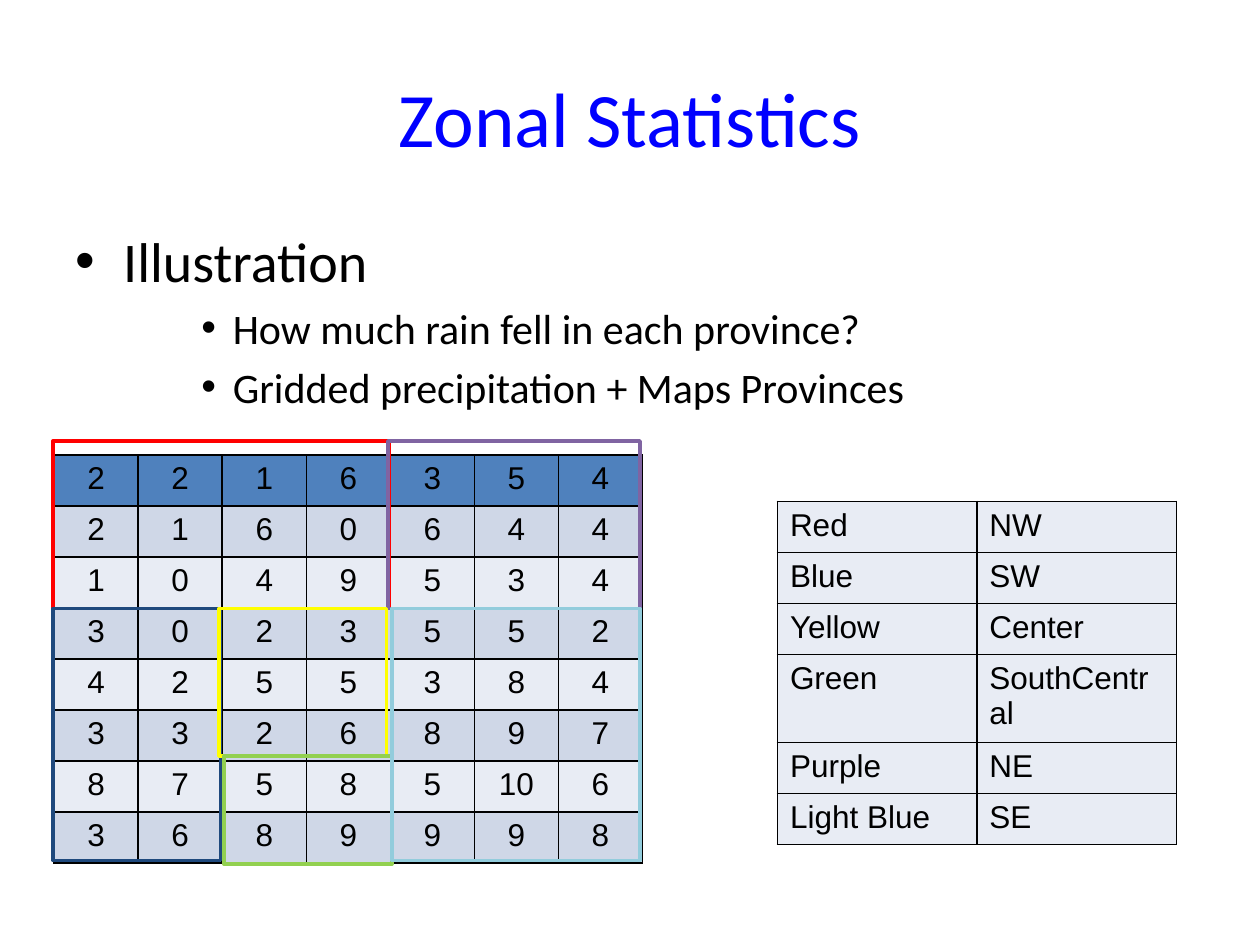
from dataclasses import dataclass

from lxml import etree
from pptx import Presentation
from pptx.dml.color import RGBColor
from pptx.enum.shapes import MSO_SHAPE
from pptx.enum.text import MSO_ANCHOR, PP_ALIGN
from pptx.oxml import parse_xml
from pptx.oxml.ns import nsdecls, qn
from pptx.util import Inches, Pt

BLACK, HEADER, DARK_BAND, LIGHT_BAND = "000000", "4F81BD", "CFD7E7", "E8ECF4"
ROW_HEIGHT = 0.405


@dataclass
class Zone:
    color: str
    left: float
    top: float
    width: float
    height: float


@dataclass
class Line:
    text: str
    size: int
    indent: float
    hanging: float
    space_before: float = 0


@dataclass
class Grid:
    left: float
    top: float
    col_width: float
    rows: list[list[str]]
    fills: list[str]
    align: PP_ALIGN


RAINFALL = [
    "2 2 1 6 3 5 4",
    "2 1 6 0 6 4 4",
    "1 0 4 9 5 3 4",
    "3 0 2 3 5 5 2",
    "4 2 5 5 3 8 4",
    "3 3 2 6 8 9 7",
    "8 7 5 8 5 10 6",
    "3 6 8 9 9 9 8",
]
LEGEND = [
    ["Red", "NW"],
    ["Blue", "SW"],
    ["Yellow", "Center"],
    ["Green", "SouthCentral"],
    ["Purple", "NE"],
    ["Light Blue", "SE"],
]
ZONES = [
    Zone("FF0000", 0.42, 3.5, 2.67, 1.33),
    Zone("8064A2", 3.08, 3.5, 2, 1.33),
    Zone("1F497D", 0.42, 4.83, 1.33, 2),
    Zone("FFFF00", 1.74, 4.83, 1.33, 1.17),
    Zone("92D050", 1.78, 6, 1.33, 0.86),
    Zone("92CCDC", 3.11, 4.83, 1.97, 2),
]
BODY = [
    Line("Illustration", 32, 0.38, 0.38),
    Line("How much rain fell in each province?", 24, 1.25, 0.25, 4.8),
    Line("Gridded precipitation + Maps Provinces", 24, 1.25, 0.25, 4.8),
]


def rgb(value: str) -> RGBColor:
    return RGBColor.from_string(value)


def add_run(p, text: str, size: int, font: str, color: str = BLACK) -> None:
    r = p.add_run()
    r.text = text
    for name, value in {"size": Pt(size), "name": font}.items():
        setattr(r.font, name, value)
    r.font.color.rgb = rgb(color)


def add_text_frame(s, left: float, top: float, width: float, height: float):
    box = s.shapes.add_textbox(Inches(left), Inches(top), Inches(width), Inches(height))
    box.text_frame.word_wrap = True
    return box.text_frame


def add_title(s, text: str) -> None:
    tf = add_text_frame(s, 0.5, 0.3, 9, 1.25)
    tf.vertical_anchor = MSO_ANCHOR.MIDDLE
    p = tf.paragraphs[0]
    p.alignment = PP_ALIGN.CENTER
    add_run(p, text, 44, "Calibri", "0000FF")


def add_bullets(s, lines: list[Line]) -> None:
    tf = add_text_frame(s, 0.5, 1.75, 9, 4.95)
    for i, line in enumerate(lines):
        p = tf.add_paragraph() if i else tf.paragraphs[0]
        p.space_before = Pt(line.space_before)
        ppr = p._p.get_or_add_pPr()
        ppr.set("marL", str(Inches(line.indent)))
        ppr.set("indent", str(-Inches(line.hanging)))
        etree.SubElement(ppr, qn("a:buFont")).set("typeface", "Arial")
        etree.SubElement(ppr, qn("a:buChar")).set("char", "•")
        add_run(p, line.text, line.size, "Calibri")


def add_borders(cell) -> None:
    """Give all four sides of a cell a 1 pt black line."""
    for side in ("lnL", "lnR", "lnT", "lnB"):
        cell._tc.get_or_add_tcPr().append(parse_xml(
            f'<a:{side} {nsdecls("a")} w="{Pt(1)}"><a:solidFill>'
            f'<a:srgbClr val="{BLACK}"/></a:solidFill></a:{side}>'))


def add_grid(s, grid: Grid) -> None:
    n_rows, n_cols = len(grid.rows), len(grid.rows[0])
    table = s.shapes.add_table(
        n_rows, n_cols, Inches(grid.left), Inches(grid.top),
        Inches(grid.col_width * n_cols), Inches(ROW_HEIGHT * n_rows)).table
    for col in table.columns:
        col.width = Inches(grid.col_width)
    for i, (values, fill) in enumerate(zip(grid.rows, grid.fills)):
        table.rows[i].height = Inches(ROW_HEIGHT)
        for j, value in enumerate(values):
            cell = table.cell(i, j)
            add_borders(cell)
            cell.fill.solid()
            cell.fill.fore_color.rgb = rgb(fill)
            p = cell.text_frame.paragraphs[0]
            p.alignment = grid.align
            add_run(p, value, 18, "Arial")


def add_zone(s, zone: Zone) -> None:
    sp = s.shapes.add_shape(
        MSO_SHAPE.RECTANGLE, Inches(zone.left), Inches(zone.top),
        Inches(zone.width), Inches(zone.height))
    sp.shadow.inherit = False
    sp.fill.background()
    sp.line.color.rgb = rgb(zone.color)
    sp.line.width = Pt(2)


def main() -> None:
    prs = Presentation()
    prs.slide_width, prs.slide_height = Inches(10), Inches(7.5)
    s = prs.slides.add_slide(prs.slide_layouts[6])
    add_bullets(s, BODY)
    add_title(s, "Zonal Statistics")
    bands = [DARK_BAND if i % 2 else LIGHT_BAND for i in range(1, len(RAINFALL))]
    add_grid(s, Grid(0.43, 3.61, 0.667, [row.split() for row in RAINFALL],
                     [HEADER] + bands, PP_ALIGN.CENTER))
    for zone in ZONES:
        add_zone(s, zone)
    add_grid(s, Grid(6.17, 3.98, 1.583, LEGEND, [LIGHT_BAND] * len(LEGEND), PP_ALIGN.LEFT))
    prs.save("out.pptx")


if __name__ == "__main__":
    main()
